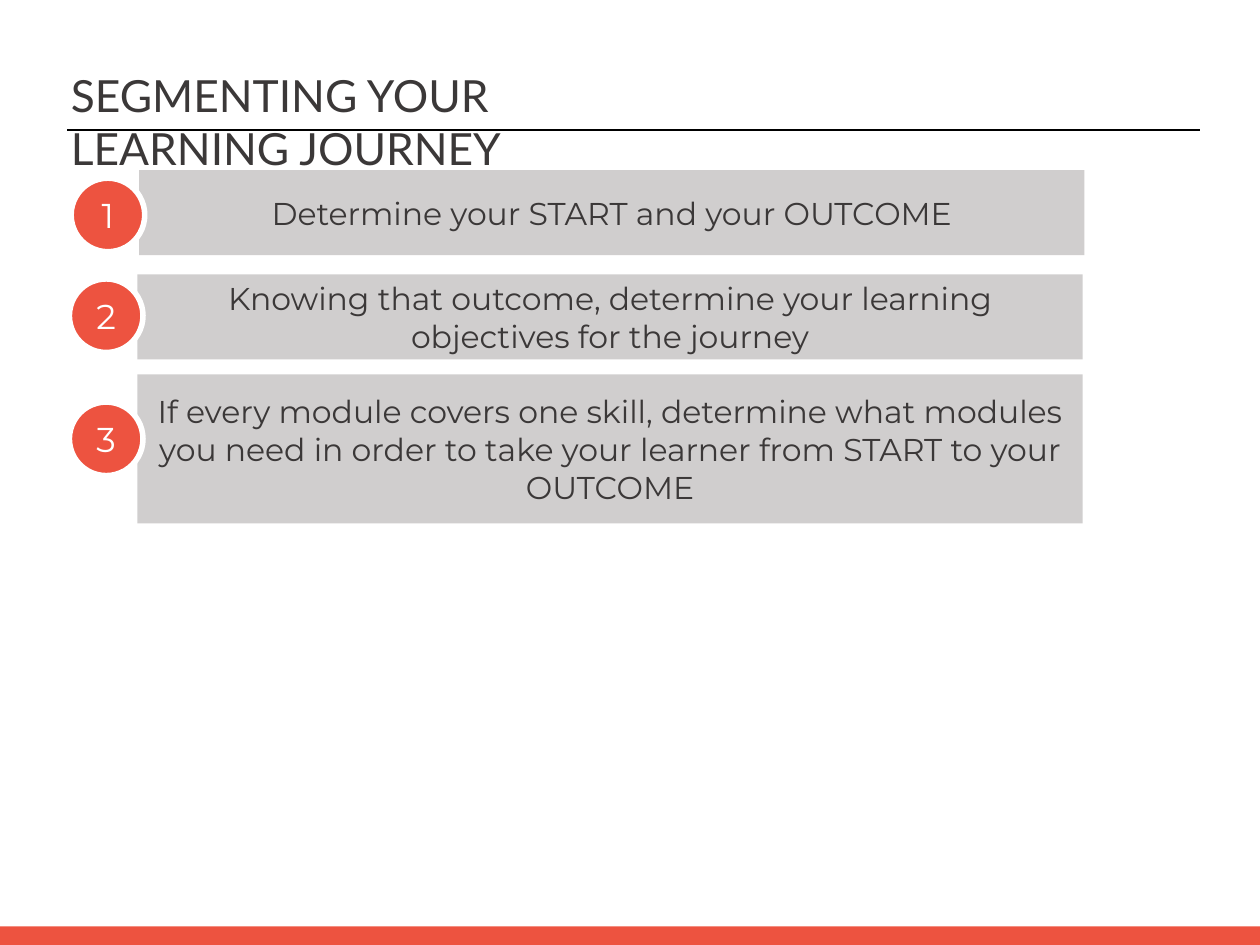
from dataclasses import dataclass

from pptx import Presentation
from pptx.dml.color import RGBColor
from pptx.enum.shapes import MSO_CONNECTOR, MSO_SHAPE
from pptx.enum.text import MSO_ANCHOR, MSO_AUTO_SIZE, PP_ALIGN
from pptx.oxml.ns import qn
from pptx.util import Cm, Pt

RECT, OVAL = MSO_SHAPE.RECTANGLE, MSO_SHAPE.OVAL
LINE = MSO_CONNECTOR.STRAIGHT
TOP, MID = MSO_ANCHOR.TOP, MSO_ANCHOR.MIDDLE
LEFT, CENTER = PP_ALIGN.LEFT, PP_ALIGN.CENTER
NO_FIT = MSO_AUTO_SIZE.NONE
TITLE_ONLY = 5


@dataclass(frozen=True)
class Theme:
    """Colours, fonts and type sizes of the slide."""
    red: str = "ED5340"
    gray: str = "D0CECE"
    ink: str = "3B3838"
    white: str = "FFFFFF"
    black: str = "000000"
    head: str = "Lato"
    body: str = "Montserrat"
    title: float = 36
    step: float = 25.6
    badge: float = 28


THEME = Theme()
WIDTH, HEIGHT = 36.12, 27.1
STEPS = [
    ("Determine your START and your OUTCOME", 3.99, 4.88, 2.44, 0.23),
    ("Knowing that outcome, determine your learning objectives for the journey",
     3.94, 7.87, 2.44, 0.13),
    ("If every module covers one skill, determine what modules you need in "
     "order to take your learner from START to your OUTCOME",
     3.94, 10.74, 4.27, 0.79),
]


def color(code):
    """Turn a hex code into a colour."""
    return RGBColor.from_string(code)


def write(shape, text, face, size, tint, align, anchor):
    """Put one styled paragraph into a shape."""
    frame = shape.text_frame
    frame.text = text
    frame.word_wrap = True
    frame.auto_size = NO_FIT
    frame.vertical_anchor = anchor
    para = frame.paragraphs[0]
    para.alignment = align
    para.line_spacing = 1.0
    para.font.name = face
    para.font.size = Pt(size)
    para.font.color.rgb = color(tint)


def block(slide, kind, box, fill):
    """Add a flat filled shape without an outline."""
    shape = slide.shapes.add_shape(kind, *map(Cm, box))
    shape.shadow.inherit = False
    shape.fill.solid()
    shape.fill.fore_color.rgb = color(fill)
    shape.line.fill.background()
    return shape


def header(slide, box):
    """Place the title in its box and a rule below its first line."""
    left, top, width, height = box
    title = slide.shapes.title
    title.left, title.top, title.width, title.height = map(Cm, box)
    write(title, "SEGMENTING YOUR LEARNING JOURNEY", THEME.head, THEME.title,
          THEME.ink, LEFT, TOP)
    start, level = left + 0.15, top + 1.9
    rule = slide.shapes.add_connector(
        LINE, Cm(start), Cm(level), Cm(start + 32.46), Cm(level))
    rule.line.color.rgb = color(THEME.black)
    rule.line.width = Pt(1)
    props = rule.element.spPr
    props.append(props.makeelement(qn("a:effectLst"), {}))


def step(slide, box, number, text, drop):
    """Place a step panel and its numbered badge at the left edge."""
    left, top, width, height = box
    panel = block(slide, RECT, box, THEME.gray)
    write(panel, text, THEME.body, THEME.step, THEME.ink, CENTER, MID)
    badge = block(slide, OVAL, (left - 1.95, top + drop, 2.11, 2.11), THEME.red)
    badge.line.color.rgb = color(THEME.white)
    badge.line.width = Pt(4.5)
    write(badge, str(number), THEME.body, THEME.badge, THEME.white, CENTER, MID)


def main():
    """Build the slide and save it."""
    deck = Presentation()
    deck.slide_width, deck.slide_height = Cm(WIDTH), Cm(HEIGHT)
    slide = deck.slides.add_slide(deck.slide_layouts[TITLE_ONLY])
    block(slide, RECT, (0, HEIGHT - 0.53, WIDTH, 0.53), THEME.red)
    header(slide, (1.78, 1.83, 16.48, 1.8))
    for number, (text, left, top, height, drop) in enumerate(STEPS, 1):
        step(slide, (left, top, 27.1, height), number, text, drop)
    deck.save("out.pptx")


if __name__ == "__main__":
    main()
